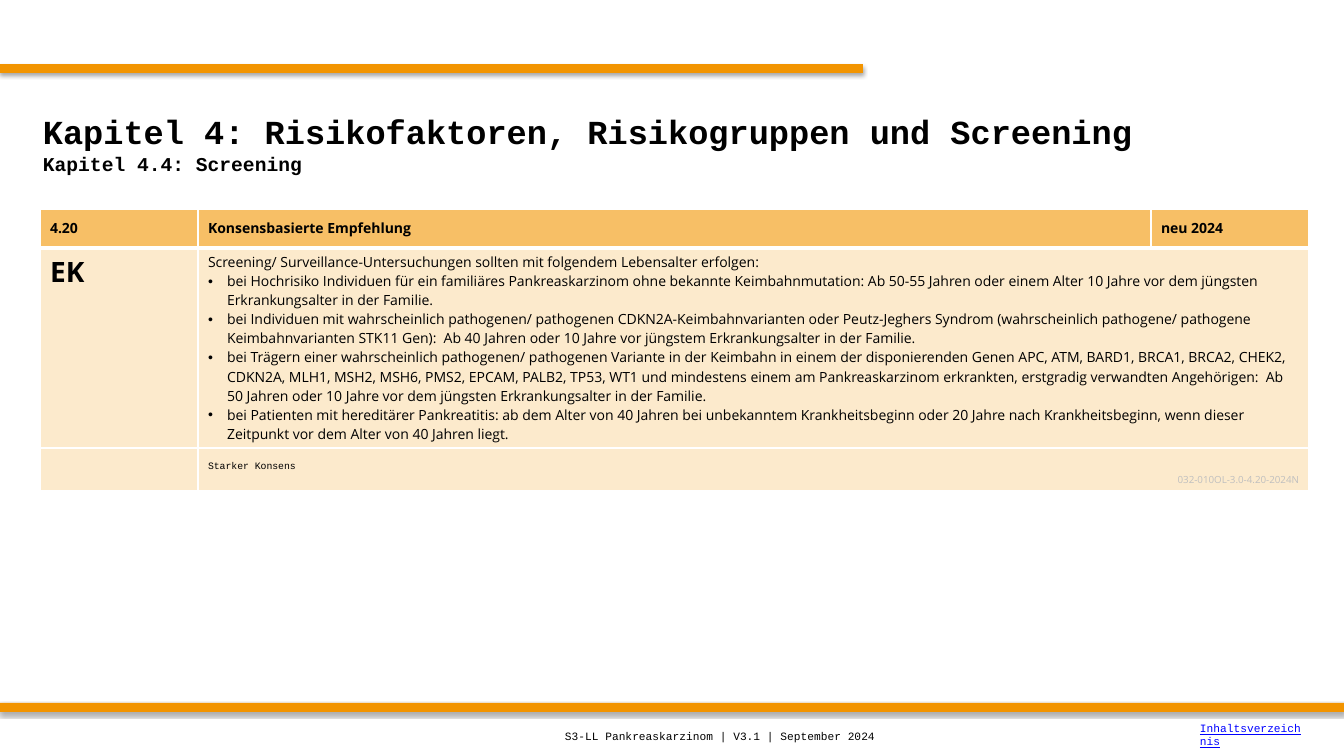
"""Build the guideline slide on screening for pancreatic cancer."""
from lxml import etree
from pptx import Presentation
from pptx.dml.color import RGBColor
from pptx.enum.shapes import MSO_SHAPE
from pptx.enum.text import MSO_ANCHOR, PP_ALIGN
from pptx.oxml import parse_xml
from pptx.oxml.ns import nsdecls, qn
from pptx.util import Pt

RECT = MSO_SHAPE.RECTANGLE
TOP, MIDDLE, BOTTOM = MSO_ANCHOR.TOP, MSO_ANCHOR.MIDDLE, MSO_ANCHOR.BOTTOM
LEFT, RIGHT = PP_ALIGN.LEFT, PP_ALIGN.RIGHT

THEME = {
    "mono": "Courier New", "sans": "Open Sans",
    "bar": "F29400", "head": "F7BF66", "body": "FCEACC", "border": "FFFFFF",
    "text": "000000", "muted": "BFBFBF", "link": "0000FF",
    "title": 24, "subtitle": 14, "grade": 20, "cell": 10, "footer": 8, "note": 7,
}

BARS = [(0, 64, 863, 9), (0, 703, 1344, 9)]

TITLE = [
    ("Kapitel 4: Risikofaktoren, Risikogruppen und Screening", "title"),
    ("Kapitel 4.4: Screening", "subtitle"),
]
HEADINGS = ["4.20", "Konsensbasierte Empfehlung", "neu 2024"]
GRADE = "EK"
INTRO = "Screening/ Surveillance-Untersuchungen sollten mit folgendem Lebensalter erfolgen:"
BULLETS = [
    "bei Hochrisiko Individuen für ein familiäres Pankreaskarzinom ohne bekannte "
    "Keimbahnmutation: Ab 50-55 Jahren oder einem Alter 10 Jahre vor dem jüngsten "
    "Erkrankungsalter in der Familie.",
    "bei Individuen mit wahrscheinlich pathogenen/ pathogenen CDKN2A-Keimbahnvarianten "
    "oder Peutz-Jeghers Syndrom (wahrscheinlich pathogene/ pathogene Keimbahnvarianten "
    "STK11 Gen):  Ab 40 Jahren oder 10 Jahre vor jüngstem Erkrankungsalter in der Familie.",
    "bei Trägern einer wahrscheinlich pathogenen/ pathogenen Variante in der Keimbahn in "
    "einem der disponierenden Genen APC, ATM, BARD1, BRCA1, BRCA2, CHEK2, CDKN2A, MLH1, "
    "MSH2, MSH6, PMS2, EPCAM, PALB2, TP53, WT1 und mindestens einem am Pankreaskarzinom "
    "erkrankten, erstgradig verwandten Angehörigen:  Ab 50 Jahren oder 10 Jahre vor dem "
    "jüngsten Erkrankungsalter in der Familie.",
    "bei Patienten mit hereditärer Pankreatitis: ab dem Alter von 40 Jahren bei "
    "unbekanntem Krankheitsbeginn oder 20 Jahre nach Krankheitsbeginn, wenn dieser "
    "Zeitpunkt vor dem Alter von 40 Jahren liegt.",
]
CONSENSUS = "Starker Konsens"
CODE = "032-010OL-3.0-4.20-2024N"
FOOTER = "S3-LL Pankreaskarzinom | V3.1 | September 2024"
CONTENTS = "Inhaltsverzeichnis"

TABLE_AT = (40, 209)
COLS = [158, 953, 158]
ROWS = [39, 200, 43]
INDENT = 19


def px(n):
    return round(n * 914400 / 100.8)


def rgb(name):
    return RGBColor.from_string(THEME[name])


def add_text(tf, text, size, font="sans", color="text", bold=False,
             underline=False, align=LEFT, bullet=False):
    p = tf.paragraphs[0]
    if p.runs:
        p = tf.add_paragraph()
    p.alignment = align
    if bullet:
        pPr = p._p.get_or_add_pPr()
        pPr.set("marL", str(px(INDENT)))
        pPr.set("indent", str(-px(INDENT)))
        etree.SubElement(pPr, qn("a:buFont")).set("typeface", "Arial")
        etree.SubElement(pPr, qn("a:buChar")).set("char", "•")
    r = p.add_run()
    r.text = text
    f = r.font
    f.name, f.size = THEME[font], Pt(THEME[size])
    f.bold, f.underline = bold, underline
    f.color.rgb = rgb(color)


def add_box(s, x, y, w, h):
    tf = s.shapes.add_textbox(px(x), px(y), px(w), px(h)).text_frame
    tf.word_wrap = True
    tf.vertical_anchor = MIDDLE
    return tf


def add_bar(s, x, y, w, h):
    sp = s.shapes.add_shape(RECT, px(x), px(y), px(w), px(h))
    sp.fill.solid()
    sp.fill.fore_color.rgb = rgb("bar")
    sp.line.fill.background()
    sp._element.spPr.append(parse_xml(
        f'<a:effectLst {nsdecls("a")}><a:outerShdw blurRad="{Pt(3.1)}" '
        f'dist="{Pt(1.8)}" dir="5400000" rotWithShape="0"><a:srgbClr val="000000">'
        '<a:alpha val="35000"/></a:srgbClr></a:outerShdw></a:effectLst>'))


def style_cell(cell, row):
    cell.fill.solid()
    cell.fill.fore_color.rgb = rgb("body" if row else "head")
    widths = {"L": 1, "R": 1, "T": 3 if row == 1 else 1, "B": 1 if row else 3}
    for i, (side, width) in enumerate(widths.items()):
        cell._tc.get_or_add_tcPr().insert(i, parse_xml(
            f'<a:ln{side} {nsdecls("a")} w="{Pt(width)}"><a:solidFill>'
            f'<a:srgbClr val="{THEME["border"]}"/></a:solidFill></a:ln{side}>'))


def add_recommendation(s):
    x, y = TABLE_AT
    table = s.shapes.add_table(len(ROWS), len(COLS), px(x), px(y),
                               px(sum(COLS)), px(sum(ROWS))).table
    table.horz_banding = False
    for col, w in zip(table.columns, COLS):
        col.width = px(w)
    for i, (row, h) in enumerate(zip(table.rows, ROWS)):
        row.height = px(h)
        for cell in row.cells:
            style_cell(cell, i)
        if i:
            row.cells[1].merge(row.cells[2])

    for cell, heading in zip(table.rows[0].cells, HEADINGS):
        cell.vertical_anchor = MIDDLE
        add_text(cell.text_frame, heading, "cell", bold=True)

    add_text(table.cell(1, 0).text_frame, GRADE, "grade", bold=True)
    advice = table.cell(1, 1)
    advice.vertical_anchor = TOP
    add_text(advice.text_frame, INTRO, "cell")
    for text in BULLETS:
        add_text(advice.text_frame, text, "cell", bullet=True)

    consensus = table.cell(2, 1)
    consensus.vertical_anchor = BOTTOM
    add_text(consensus.text_frame, CONSENSUS, "note", "mono")
    add_text(consensus.text_frame, CODE, "note", color="muted", align=RIGHT)


def main():
    prs = Presentation()
    prs.slide_width, prs.slide_height = px(1344), px(756)
    s = prs.slides.add_slide(prs.slide_layouts[6])
    for bar in BARS:
        add_bar(s, *bar)
    title = add_box(s, 33, 84, 1277, 118)
    for text, size in TITLE:
        add_text(title, text, size, "mono", bold=True)
    add_recommendation(s)
    add_text(add_box(s, 555, 717, 555, 39), FOOTER, "footer", "mono")
    add_text(add_box(s, 1190, 715, 123, 39), CONTENTS, "footer", "mono", "link",
             underline=True)
    prs.save("out.pptx")


if __name__ == "__main__":
    main()
